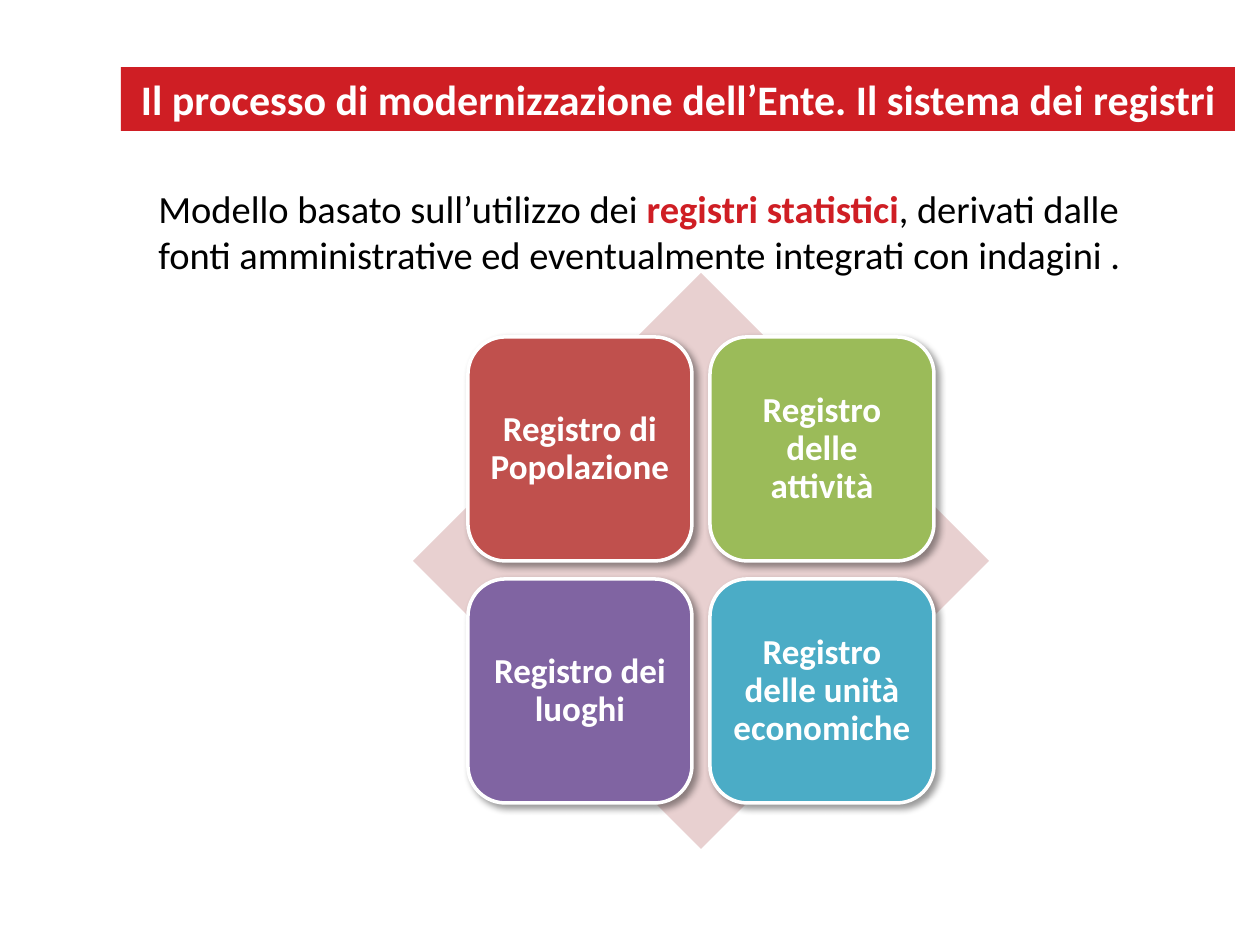
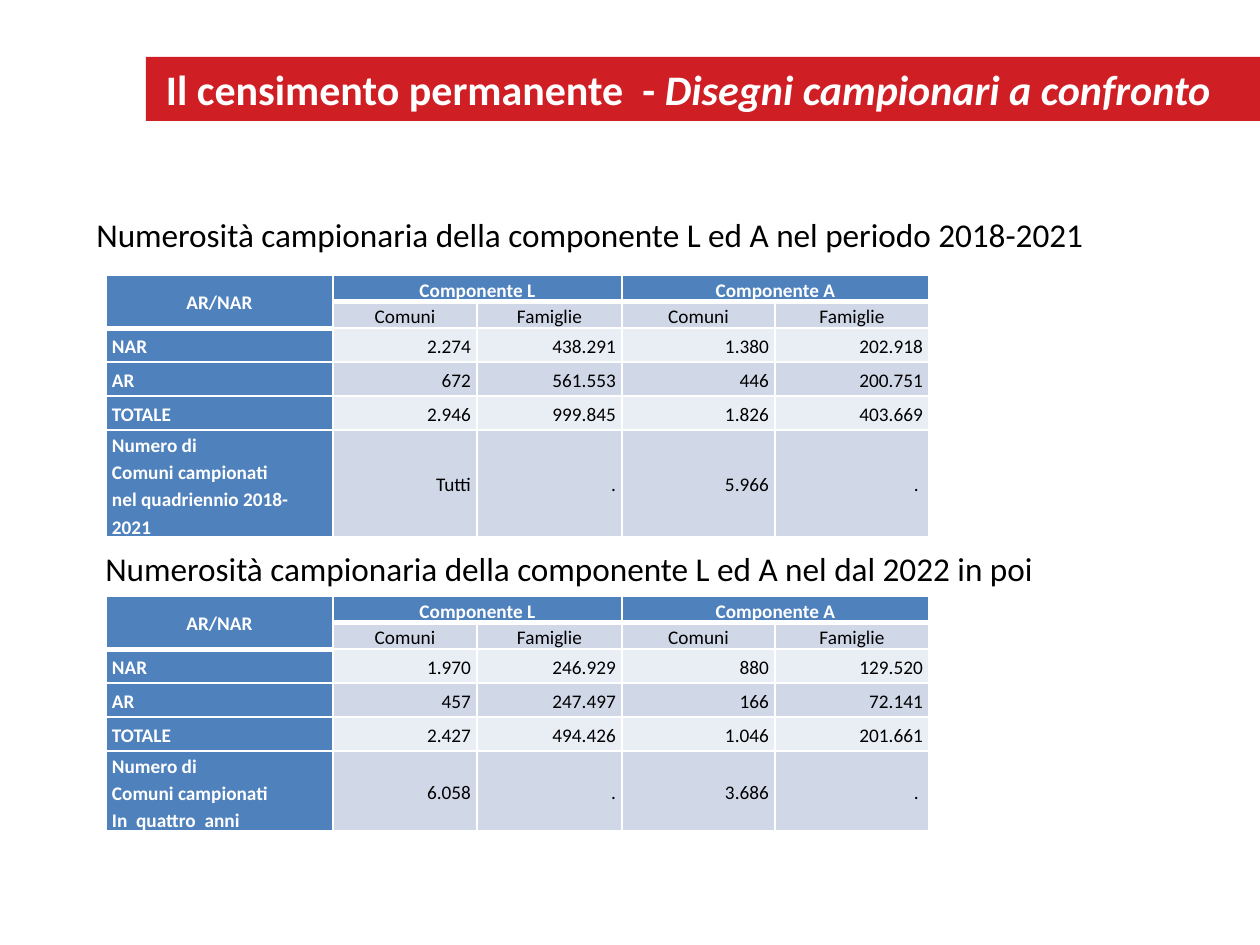
from typing import Any, NamedTuple

from lxml.etree import SubElement
from pptx import Presentation
from pptx.dml.color import RGBColor
from pptx.enum.shapes import MSO_SHAPE
from pptx.enum.text import MSO_ANCHOR, MSO_AUTO_SIZE, PP_ALIGN
from pptx.oxml.ns import qn
from pptx.util import Pt

SCALE = 914400 / 126
RED, WHITE, BLACK = "CF1E24", "FFFFFF", "000000"
BLUE, PALE, LIGHT, PINK = "4F81BD", "D0D8E8", "E9EDF4", "E8D0D0"
FONT = "Calibri"
LEFT, MID, RIGHT = PP_ALIGN.LEFT, PP_ALIGN.CENTER, PP_ALIGN.RIGHT


class Box(NamedTuple):
    x: int
    y: int
    w: int
    h: int


class Run(NamedTuple):
    text: str
    size: int
    color: str = BLACK
    bold: bool = False
    italic: bool = False


class Card(NamedTuple):
    text: str
    fill: str


class Panel(NamedTuple):
    title: str
    head: Box
    top: int
    rows: list[list[str]]


def px(n: int) -> int:
    return round(n * SCALE)


def ink(code: str) -> RGBColor:
    return RGBColor.from_string(code)


def put(obj: Any, **vals: Any) -> None:
    """Set each named attribute on obj."""
    for name, val in vals.items():
        setattr(obj, name, val)


def place(shape: Any, box: Box) -> None:
    put(shape, left=px(box.x), top=px(box.y), width=px(box.w), height=px(box.h))


def paint(obj: Any, code: str) -> None:
    obj.fill.solid()
    obj.fill.fore_color.rgb = ink(code)


def write(para: Any, *runs: Run, align: PP_ALIGN = LEFT) -> None:
    para.alignment = align
    for item in runs:
        run = para.add_run()
        run.text = item.text
        put(run.font, name=FONT, size=Pt(item.size), bold=item.bold, italic=item.italic)
        run.font.color.rgb = ink(item.color)


def start(deck: Any, box: Box, *runs: Run) -> Any:
    """Add a slide with its red title band."""
    slide = deck.slides.add_slide(deck.slide_layouts[5])
    title = slide.shapes.title
    place(title, box)
    paint(title, RED)
    put(title.text_frame, margin_left=px(20), margin_right=0, margin_top=0, margin_bottom=0,
        vertical_anchor=MSO_ANCHOR.MIDDLE, auto_size=MSO_AUTO_SIZE.NONE, word_wrap=True)
    write(title.text_frame.paragraphs[0], *runs)
    return slide


def note(slide: Any, box: Box, *runs: Run) -> None:
    """Add a wrapped line of plain text."""
    frame = slide.shapes.add_textbox(*map(px, box)).text_frame
    frame.word_wrap = True
    write(frame.paragraphs[0], *runs)


def shade(shape: Any) -> None:
    """Give the shape a soft shadow, down and right."""
    shape.shadow.inherit = False
    effects = shape._element.spPr.find(qn("a:effectLst"))
    outer = SubElement(effects, qn("a:outerShdw"), blurRad=str(Pt(4)), dist=str(Pt(3)),
                       dir="2700000", algn="tl", rotWithShape="0")
    color = SubElement(outer, qn("a:srgbClr"), val=BLACK)
    SubElement(color, qn("a:alpha"), val="40000")


def tile(slide: Any, box: Box, card: Card) -> None:
    shape = slide.shapes.add_shape(MSO_SHAPE.ROUNDED_RECTANGLE, *map(px, box))
    paint(shape, card.fill)
    shape.line.color.rgb = ink(WHITE)
    shape.line.width = Pt(2)
    shade(shape)
    frame, gap = shape.text_frame, px(11)
    put(frame, margin_left=gap, margin_right=gap, margin_top=gap, margin_bottom=gap,
        word_wrap=True, vertical_anchor=MSO_ANCHOR.MIDDLE)
    write(frame.paragraphs[0], Run(card.text, 20, WHITE, True), align=MID)
    frame.paragraphs[0].line_spacing = 0.9


def edge(cell: Any, base: int) -> None:
    """Draw white cell borders, the lower one base points wide."""
    props = cell._tc.get_or_add_tcPr()
    for side, wide in zip("LRTB", (1, 1, 1, base)):
        line = SubElement(props, qn(f"a:ln{side}"), w=str(Pt(wide)))
        fill = SubElement(line, qn("a:solidFill"))
        SubElement(fill, qn("a:srgbClr"), val=WHITE)


def fill_cell(cell: Any, text: str, row: int, col: int) -> None:
    head = row == 0 or col == 0
    edge(cell, 3 if row == 0 or (row, col) == (1, 0) else 1)
    paint(cell, BLUE if head else LIGHT if row in (2, 4) else PALE)
    put(cell, margin_left=px(6), margin_right=px(6), margin_top=0, margin_bottom=0,
        vertical_anchor=MSO_ANCHOR.MIDDLE)
    align = MID if row < 2 else RIGHT if col else LEFT
    for i, part in enumerate(text.split("\n")):
        para = cell.text_frame.add_paragraph() if i else cell.text_frame.paragraphs[0]
        para.line_spacing = 1.15
        write(para, Run(part, 11, WHITE if head else BLACK, head), align=align)


def grid(slide: Any, top: int, body: list[list[str]]) -> None:
    """Add a table with two header rows above the body."""
    rows = [["AR/NAR", "Componente L", "", "Componente A", ""],
            ["", *["Comuni", "Famiglie"] * 2], *body]
    wide, tall = (227, 144, 145, 153, 154), (24, 24, 34, 34, 34, 74)
    box = Box(106, top, sum(wide), sum(tall))
    table = slide.shapes.add_table(len(tall), len(wide), *map(px, box)).table
    put(table, first_row=False, horz_banding=False)
    for col, size in zip(table.columns, wide):
        col.width = px(size)
    for r, (row, size) in enumerate(zip(rows, tall)):
        table.rows[r].height = px(size)
        for c, text in enumerate(row):
            fill_cell(table.cell(r, c), text, r, c)
    for a, b in (((0, 0), (1, 0)), ((0, 1), (0, 2)), ((0, 3), (0, 4))):
        table.cell(*a).merge(table.cell(*b))


CARDS = [
    Card("Registro di Popolazione", "C0504D"),
    Card("Registro delle attività", "9BBB59"),
    Card("Registro dei luoghi", "8064A2"),
    Card("Registro delle unità economiche", "4BACC6"),
]

PANELS = [
    Panel("Numerosità campionaria della componente L ed A nel periodo 2018-2021",
          Box(84, 208, 1065, 53), 275, [
              ["NAR", "2.274", "438.291", "1.380", "202.918"],
              ["AR", "672", "561.553", "446", "200.751"],
              ["TOTALE", "2.946", "999.845", "1.826", "403.669"],
              ["Numero di\nComuni campionati\nnel quadriennio 2018-2021",
               "Tutti", ".", "5.966", ". "]]),
    Panel("Numerosità campionaria della componente L ed A nel dal 2022 in poi",
          Box(93, 542, 1032, 53), 596, [
              ["NAR", "1.970", "246.929", "880", "129.520"],
              ["AR", "457", "247.497", "166", "72.141"],
              ["TOTALE", "2.427", "494.426", "1.046", "201.661"],
              ["Numero di\nComuni campionati\nIn  quattro  anni",
               "6.058", ".", "3.686", ". "]]),
]


def registers(deck: Any) -> None:
    slide = start(deck, Box(121, 67, 1114, 64), Run(
        "Il processo di modernizzazione dell’Ente. Il sistema dei registri", 24, WHITE, True))
    back = slide.shapes.add_shape(MSO_SHAPE.DIAMOND, *map(px, Box(413, 273, 576, 576)))
    paint(back, PINK)
    back.line.fill.background()
    back.shadow.inherit = False
    size, step = 224, 242
    for i, card in enumerate(CARDS):
        row, col = divmod(i, 2)
        tile(slide, Box(468 + col * step, 337 + row * step, size, size), card)
    note(slide, Box(146, 179, 1062, 106),
         Run("Modello basato sull’utilizzo dei ", 22),
         Run("registri statistici", 22, RED, True),
         Run(", derivati dalle fonti amministrative ed eventualmente "
             "integrati con indagini .", 22))


def samples(deck: Any) -> None:
    slide = start(deck, Box(146, 57, 1114, 64),
                  Run("Il censimento permanente  - ", 24, WHITE, True),
                  Run("Disegni campionari a confronto", 24, WHITE, True, True))
    for panel in PANELS:
        note(slide, panel.head, Run(panel.title, 19))
        grid(slide, panel.top, panel.rows)


def main() -> None:
    deck = Presentation()
    put(deck, slide_width=px(1260), slide_height=px(945))
    registers(deck)
    samples(deck)
    deck.save("out.pptx")


if __name__ == "__main__":
    main()
